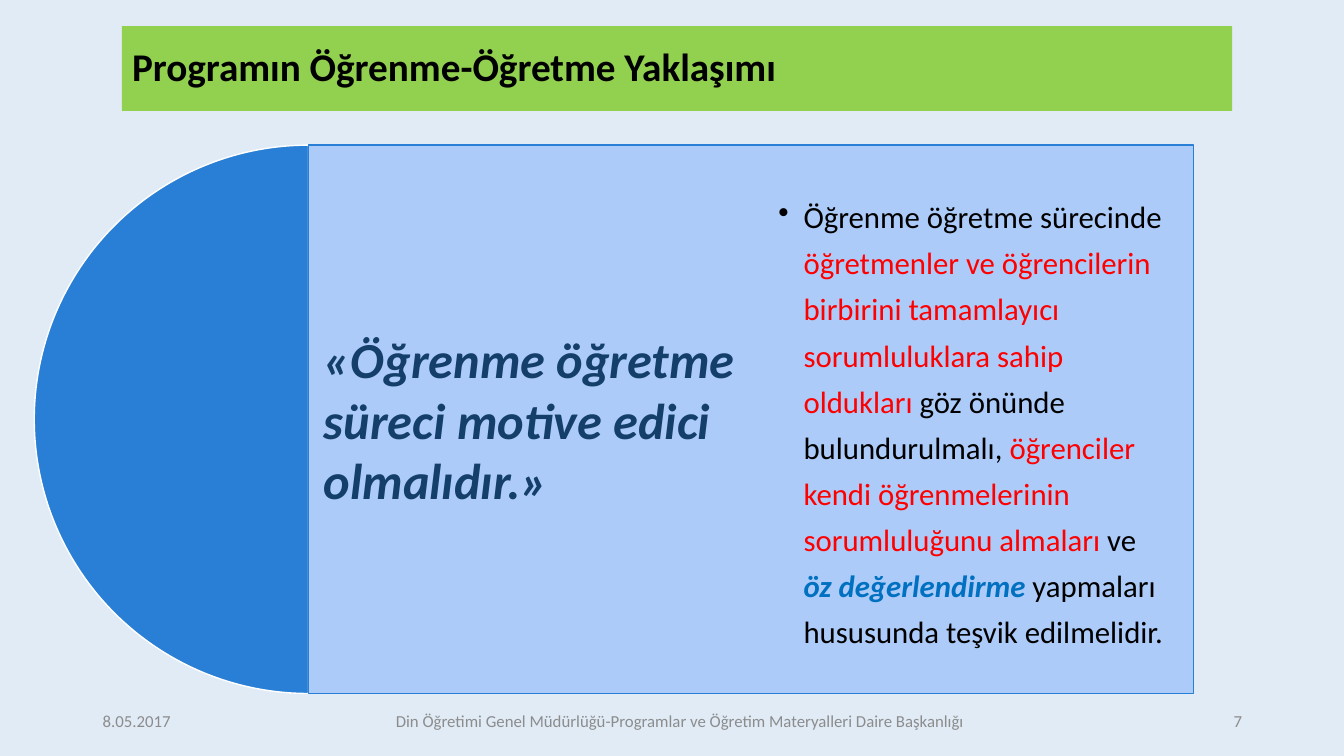
import pptx
import pptx.util
import pptx.dml.color
import pptx.enum.shapes
import pptx.enum.text
import pptx.oxml.ns
import lxml.etree

Inches, Pt = pptx.util.Inches, pptx.util.Pt
RGBColor = pptx.dml.color.RGBColor
MSO_SHAPE = pptx.enum.shapes.MSO_SHAPE
PP_ALIGN = pptx.enum.text.PP_ALIGN

BACKGROUND = RGBColor(0xE0, 0xEB, 0xF6)
GREEN = RGBColor(0x92, 0xD0, 0x50)
BLUE = RGBColor(0x29, 0x7F, 0xD5)
PALE_BLUE = RGBColor(0xAC, 0xCB, 0xF9)
NAVY = RGBColor(0x14, 0x3F, 0x6A)
ACCENT = RGBColor(0x00, 0x70, 0xC0)
RED = RGBColor(0xFF, 0x00, 0x00)
GRAY = RGBColor(0x8C, 0x8C, 0x8C)
BLACK = RGBColor(0x00, 0x00, 0x00)
WHITE = RGBColor(0xFF, 0xFF, 0xFF)


def add_run(p, text, size, color, bold=False, italic=False):
    r = p.add_run()
    r.text = text
    r.font.name = "Calibri"
    r.font.size = Pt(size)
    r.font.color.rgb = color
    r.font.bold = bold
    r.font.italic = italic


def set_frame(tf, inset_x=0.1, inset_y=0.05):
    tf.word_wrap = True
    tf.auto_size = pptx.enum.text.MSO_AUTO_SIZE.NONE
    tf.vertical_anchor = pptx.enum.text.MSO_ANCHOR.MIDDLE
    tf.margin_left = tf.margin_right = Inches(inset_x)
    tf.margin_top = tf.margin_bottom = Inches(inset_y)
    return tf.paragraphs[0]


def add_text(s, x, y, w, h, inset_x=0.1, inset_y=0.05):
    box = s.shapes.add_textbox(Inches(x), Inches(y), Inches(w), Inches(h))
    return set_frame(box.text_frame, inset_x, inset_y)


def add_filled(s, kind, x, y, w, h, fill, line):
    sp = s.shapes.add_shape(kind, Inches(x), Inches(y), Inches(w), Inches(h))
    sp.shadow.inherit = False
    sp.fill.solid()
    sp.fill.fore_color.rgb = fill
    sp.line.color.rgb = line
    sp.line.width = Pt(1)
    return sp


def add_bullet(p, indent):
    pPr = p._p.get_or_add_pPr()
    pPr.set("marL", str(Inches(indent)))
    pPr.set("indent", str(-Inches(indent)))
    bullet = lxml.etree.SubElement(pPr, pptx.oxml.ns.qn("a:buChar"))
    bullet.set("char", "•")


def title_bar(s, x, y, w, h):
    title = s.shapes.title
    title.left, title.top = Inches(x), Inches(y)
    title.width, title.height = Inches(w), Inches(h)
    title.fill.solid()
    title.fill.fore_color.rgb = GREEN
    p = set_frame(title.text_frame)
    p.alignment = PP_ALIGN.LEFT
    p.line_spacing = 0.9
    add_run(p, "Programın Öğrenme-Öğretme Yaklaşımı", 28, BLACK, bold=True)


def approach_panel(s, x, y, w, h):
    # Half disc, with the panel starting at its centre
    disc = add_filled(s, MSO_SHAPE.PIE, x, y, h, h, BLUE, WHITE)
    disc.adjustments[0], disc.adjustments[1] = 54, 162
    panel_x, panel_w = x + h / 2, w - h / 2
    column = panel_w / 2
    add_filled(s, MSO_SHAPE.RECTANGLE, panel_x, y, panel_w, h, PALE_BLUE, BLUE)

    # Quotation
    p = add_text(s, panel_x, y, column, h, 0.15, 0.15)
    add_run(p, "«Öğrenme öğretme süreci motive edici olmalıdır.»", 36, NAVY,
            bold=True, italic=True)

    # Explanation
    p = add_text(s, panel_x + column, y, column, h, 0.27, 0.27)
    p.line_spacing = 1.25
    add_bullet(p, 0.25)
    for text, color in (
        ("Öğrenme öğretme sürecinde ", BLACK),
        ("öğretmenler ve öğrencilerin birbirini tamamlayıcı "
         "sorumluluklara sahip oldukları ", RED),
        ("göz önünde bulundurulmalı, ", BLACK),
        ("öğrenciler kendi öğrenmelerinin sorumluluğunu almaları ", RED),
        ("ve ", BLACK),
        ("öz değerlendirme ", ACCENT),
        ("yapmaları hususunda teşvik edilmelidir.", BLACK),
    ):
        strong = color == ACCENT
        add_run(p, text, 22, color, bold=strong, italic=strong)


def footer(s, x, y, w, h):
    for text, dx, width, align in (
        ("8.05.2017", 0, 1.25, PP_ALIGN.LEFT),
        ("Din Öğretimi Genel Müdürlüğü-Programlar ve Öğretim Materyalleri "
         "Daire Başkanlığı", 1.58, 8.49, PP_ALIGN.CENTER),
        ("7", w - 1.16, 1.16, PP_ALIGN.RIGHT),
    ):
        p = add_text(s, x + dx, y, width, h)
        p.alignment = align
        add_run(p, text, 12, GRAY)


def main():
    prs = pptx.Presentation()
    prs.slide_width, prs.slide_height = Inches(13.33), Inches(7.5)
    s = prs.slides.add_slide(prs.slide_layouts[5])
    s.background.fill.solid()
    s.background.fill.fore_color.rgb = BACKGROUND
    title_bar(s, 1.21, 0.26, 11.01, 0.84)
    approach_panel(s, 0.34, 1.44, 11.5, 5.44)
    footer(s, 0.92, 6.95, 11.5, 0.4)
    prs.save("out.pptx")


if __name__ == "__main__":
    main()
